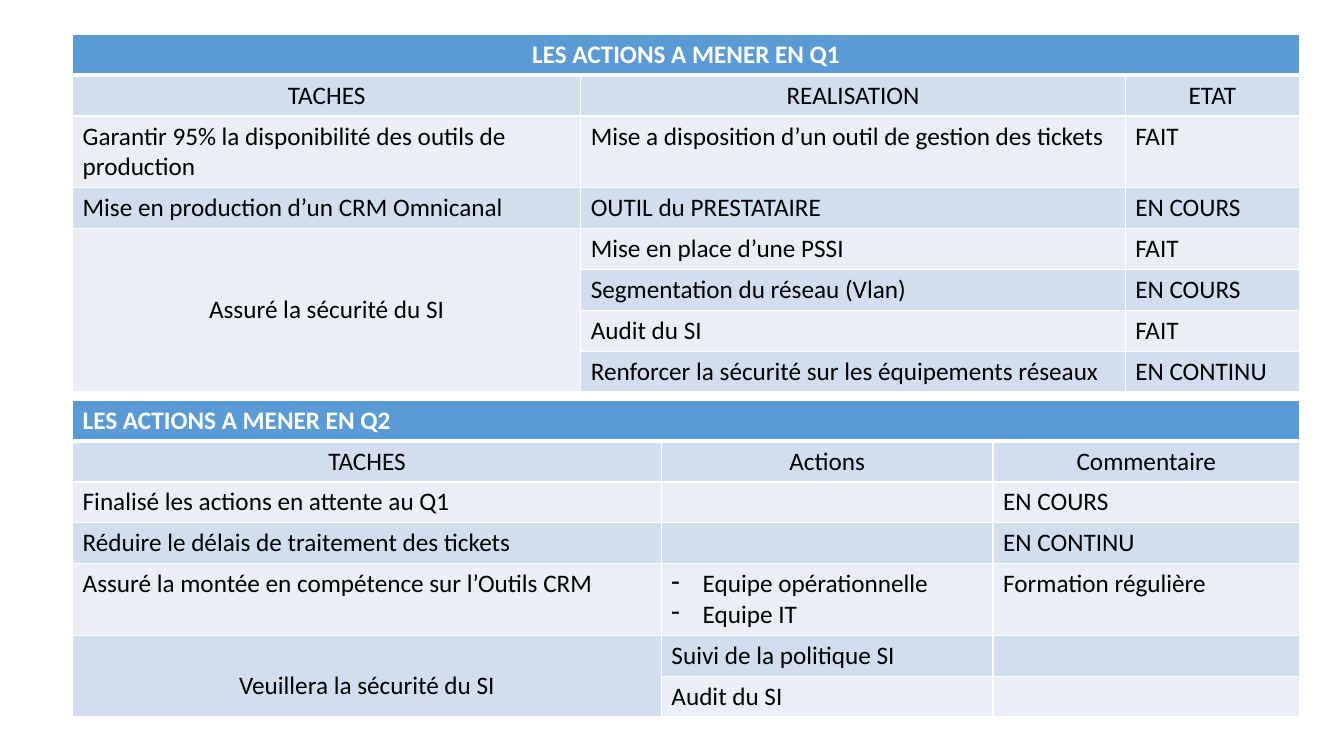
import pptx
import pptx.util
import pptx.dml.color
import pptx.enum.text
import pptx.oxml
import pptx.oxml.ns

Inches, Pt = pptx.util.Inches, pptx.util.Pt
RGB = pptx.dml.color.RGBColor.from_string
ALIGN = pptx.enum.text.PP_ALIGN

# Content: a list in a cell is a dashed list, None continues a merged cell
Q1 = {
    "top": 0.34, "height": 3.54, "cols": [5.04, 5.4, 1.73],
    "tall_row": 2, "title_align": ALIGN.CENTER,
    "merge": {"first": 4, "last": 7, "lines_above": 2},
    "rows": [
        ("LES ACTIONS A MENER EN Q1", None, None),
        ("TACHES", "REALISATION", "ETAT"),
        ("Garantir 95% la disponibilité des outils de production",
         "Mise a disposition d’un outil de gestion des tickets", "FAIT"),
        ("Mise en production d’un CRM Omnicanal", "OUTIL du PRESTATAIRE", "EN COURS"),
        ("Assuré la sécurité du SI", "Mise en place d’une PSSI", "FAIT"),
        (None, "Segmentation du réseau (Vlan)", "EN COURS"),
        (None, "Audit du SI", "FAIT"),
        (None, "Renforcer la sécurité sur les équipements réseaux", "EN CONTINU"),
    ],
}
Q2 = {
    "top": 3.97, "height": 3.13, "cols": [5.84, 3.29, 3.04],
    "tall_row": 4, "title_align": ALIGN.LEFT,
    "merge": {"first": 5, "last": 6, "lines_above": 1},
    "rows": [
        ("LES ACTIONS A MENER EN Q2", None, None),
        ("TACHES", "Actions", "Commentaire"),
        ("Finalisé les actions en attente au Q1", "", "EN COURS"),
        ("Réduire le délais de traitement des tickets", "", "EN CONTINU"),
        ("Assuré la montée en compétence sur l’Outils CRM",
         ["Equipe opérationnelle", "Equipe IT"], "Formation régulière"),
        ("Veuillera la sécurité du SI", "Suivi de la politique SI", ""),
        (None, "Audit du SI", ""),
    ],
}
THEME = {
    "font": "Calibri", "size": 18, "header": "5B9BD5", "bands": ("EAEFF7", "D2DEEF"),
    "border": "FFFFFF", "header_text": "FFFFFF", "text": "000000",
}
LEFT, TALL, LINE, MARGIN, INDENT = 0.72, 0.71, 0.3, 0.05, 0.31


def add_xml(parent, xml):
    ns = pptx.oxml.ns.nsdecls("a")
    parent.append(pptx.oxml.parse_xml(xml.replace(" ", f" {ns} ", 1)))


def style_cell(cell, row):
    tcPr = cell._tc.get_or_add_tcPr()
    for side in "LRTB":
        thick = (row, side) in ((0, "B"), (1, "T"))
        add_xml(tcPr, f'<a:ln{side} w="{Pt(3 if thick else 1)}"><a:solidFill>'
                      f'<a:srgbClr val="{THEME["border"]}"/></a:solidFill></a:ln{side}>')
    cell.fill.solid()
    cell.fill.fore_color.rgb = RGB(THEME["bands"][row % 2] if row else THEME["header"])


def write_cell(cell, content, row, align):
    dashed = isinstance(content, list)
    tf = cell.text_frame
    for i, line in enumerate(content if dashed else [content]):
        p = tf.add_paragraph() if i else tf.paragraphs[0]
        p.alignment = align
        if dashed:
            pPr = p._p.get_or_add_pPr()
            pPr.set("marL", str(Inches(INDENT)))
            pPr.set("indent", str(-Inches(INDENT)))
            add_xml(pPr, '<a:buFontTx />')
            add_xml(pPr, '<a:buChar char="-"/>')
        r = p.add_run()
        r.text = line
        r.font.name, r.font.size = THEME["font"], Pt(THEME["size"])
        r.font.bold = row == 0
        r.font.color.rgb = RGB(THEME["text"] if row else THEME["header_text"])


def add_plan(slide, plan):
    rows, cols, merge = plan["rows"], plan["cols"], plan["merge"]
    table = slide.shapes.add_table(
        len(rows), len(cols), Inches(LEFT), Inches(plan["top"]),
        Inches(sum(cols)), Inches(plan["height"])).table
    for c, width in enumerate(cols):
        table.columns[c].width = Inches(width)
    normal = (plan["height"] - TALL) / (len(rows) - 1)
    for r in range(len(rows)):
        table.rows[r].height = Inches(TALL if r == plan["tall_row"] else normal)

    # Title across the top, last task down its rows
    table.cell(0, 0).merge(table.cell(0, len(cols) - 1))
    task = table.cell(merge["first"], 0)
    task.merge(table.cell(merge["last"], 0))
    task.margin_top = Inches(MARGIN + LINE * merge["lines_above"])

    for r, row in enumerate(rows):
        for c, content in enumerate(row):
            cell = table.cell(r, c)
            style_cell(cell, r)
            centred = r == 1 or (r, c) == (merge["first"], 0)
            align = ALIGN.CENTER if centred else ALIGN.LEFT
            if content:
                write_cell(cell, content, r, align if r else plan["title_align"])


def main():
    prs = pptx.Presentation()
    prs.slide_width, prs.slide_height = Inches(13.33), Inches(7.5)
    slide = prs.slides.add_slide(prs.slide_layouts[6])
    for plan in (Q1, Q2):
        add_plan(slide, plan)
    prs.save("out.pptx")


if __name__ == "__main__":
    main()
